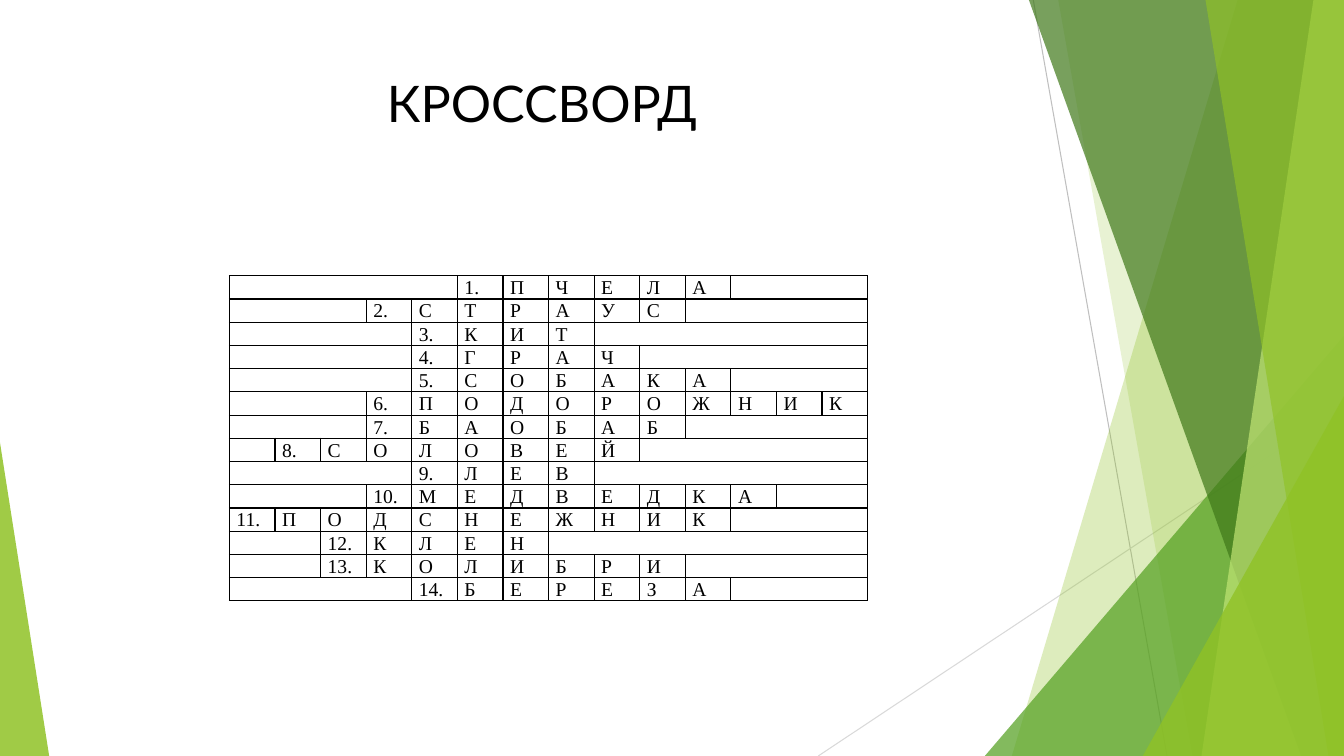
from dataclasses import dataclass
from lxml.etree import SubElement
from pptx import Presentation
from pptx.dml.color import RGBColor as Rgb
from pptx.enum.shapes import MSO_CONNECTOR as Link, MSO_SHAPE as Kind
from pptx.enum.text import MSO_ANCHOR as Anchor, PP_ALIGN as Align
from pptx.oxml.ns import qn
from pptx.util import Cm, Pt


@dataclass(frozen=True)
class Theme:
    ink: str = "000000"
    lime: str = "90C226"
    green: str = "54A021"
    dark: str = "3F7819"
    pale: str = "C0E474"
    title: int = 36
    text: int = 14
    blank: int = 10
    head: str = "Lato"
    body: str = "Times New Roman"


T = Theme()
WIDE, HIGH = 33.87, 19.05


def style(run, name, size):
    run.font.name, run.font.size = name, Pt(size)
    run.font.color.rgb = Rgb.from_string(T.ink)


def paint(shape, tone, alpha):
    """Fill a shape with a see-through colour and no outline."""
    shape.shadow.inherit = False
    shape.line.fill.background()
    shape.fill.solid()
    shape.fill.fore_color.rgb = Rgb.from_string(tone)
    color = shape._element.spPr.find(".//" + qn("a:srgbClr"))
    SubElement(color, qn("a:alpha"), val=str(alpha * 1000))


deck = Presentation()
deck.slide_width, deck.slide_height = Cm(WIDE), Cm(HIGH)
slide = deck.slides.add_slide(deck.slide_layouts[5])
shapes = slide.shapes

# Thin lines behind the ribbons
for x1, y1, x2, tone in [(26.04, 0, 29.41, "BFBFBF"), (WIDE, 10.24, 20.62, "D9D9D9")]:
    line = shapes.add_connector(Link.STRAIGHT, Cm(x1), Cm(y1), Cm(x2), Cm(HIGH))
    line.line.color.rgb = Rgb.from_string(tone)
    line.line.width = Pt(0.75)
    SubElement(line._element.spPr, qn("a:effectLst"))

# A band has its top and foot x; a peak has its left, top, width and apex
decor = [
    ("band", (31.19, 25.5), T.lime, 30),
    ("band", (26.67, 30.05), T.lime, 20),
    ("peak", (24.82, 8.46, 9.05, 1), T.green, 72),
    ("band", (25.93, 32.79), T.dark, 70),
    ("band", (33.1, 30.28), T.pale, 70),
    ("band", (30.38, 33.48), T.lime, 65),
    ("peak", (28.8, 9.98, 5.07, 1), T.lime, 80),
    ("peak", (0, 11.15, 1.24, 0), T.lime, 85),
]
for kind, place, tone, alpha in decor:
    if kind == "band":
        top, foot = place
        path = shapes.build_freeform(Cm(top), 0)
        path.add_line_segments(
            [(Cm(WIDE), 0), (Cm(WIDE), Cm(HIGH)), (Cm(foot), Cm(HIGH))], close=True)
        shape = path.convert_to_shape()
    else:
        left, top, width, apex = place
        shape = shapes.add_shape(
            Kind.ISOSCELES_TRIANGLE, Cm(left), Cm(top), Cm(width), Cm(HIGH - top))
        shape.adjustments[0] = apex
    paint(shape, tone, alpha)

# Title
title = shapes.title
title.left, title.top, title.width, title.height = Cm(1.88), Cm(1.7), Cm(23.88), Cm(3.66)
frame = title.text_frame
frame.text = "КРОССВОРД "
frame.vertical_anchor = Anchor.TOP
frame.paragraphs[0].alignment = Align.CENTER
style(frame.paragraphs[0].runs[0], T.head, T.title)

# Crossword: the column of each number, and the word after it
words = [
    (5, "ПЧЕЛА"), (3, "СТРАУС"), (4, "КИТ"), (4, "ГРАЧ"), (4, "СОБАКА"),
    (3, "ПОДОРОЖНИК"), (3, "БАОБАБ"), (1, "СОЛОВЕЙ"), (4, "ЛЕВ"),
    (3, "МЕДВЕДКА"), (0, "ПОДСНЕЖНИК"), (2, "КЛЕН"), (2, "КОЛИБРИ"), (4, "БЕРЕЗА"),
]
COLS, ROWS = 14, len(words)
STEP, ROW = 1.15, 0.54
grid = shapes.add_table(
    ROWS, COLS, Cm(5.78), Cm(6.95), Cm(COLS * STEP), Cm(ROWS * ROW)).table
grid.first_row = grid.horz_banding = False
for col in grid.columns:
    col.width = Cm(STEP)

for row, (start, word) in enumerate(words):
    grid.rows[row].height = Cm(ROW)
    marks = [""] * start + [f"{row + 1}.", *word]
    end = len(marks)
    marks += [""] * (COLS - end)
    for col, mark in enumerate(marks):
        cell = grid.cell(row, col)
        cell.margin_left = cell.margin_right = Cm(0.18)
        cell.margin_top = cell.margin_bottom = 0
        para = cell.text_frame.paragraphs[0]
        para.text = mark
        para.line_spacing, para.space_after = 1.07, Pt(8)
        for run in para.runs:
            style(run, T.body, T.text)
        if not mark:
            SubElement(para._p, qn("a:endParaRPr"), sz=str(T.blank * 100))
        props = cell._tc.get_or_add_tcPr()
        for side in "LRTB":
            edge = SubElement(props, qn(f"a:ln{side}"), w=str(Pt(1)))
            fill = SubElement(edge, qn("a:solidFill"))
            SubElement(fill, qn("a:srgbClr"), val=T.ink)
        cell.fill.background()
    for first, last in [(0, start - 1), (end, COLS - 1)]:
        if last > first:
            grid.cell(row, first).merge(grid.cell(row, last))

deck.save("out.pptx")
